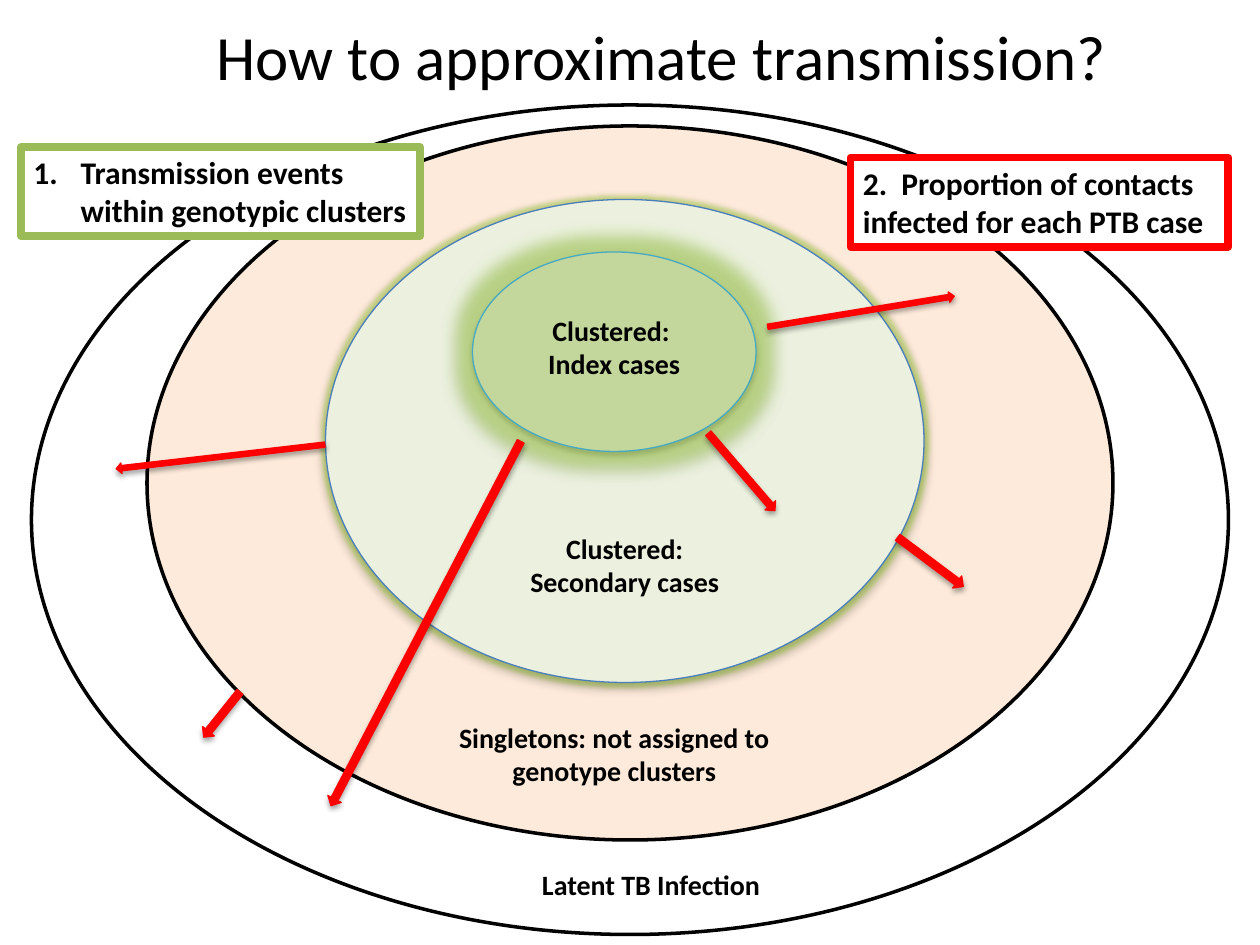
"""Build a slide of nested case groups with arrows for transmission paths."""
from lxml import etree
from pptx import Presentation
from pptx.dml.color import RGBColor
from pptx.enum.shapes import MSO_SHAPE as SHAPE
from pptx.enum.text import MSO_ANCHOR as ANCHOR, PP_ALIGN as ALIGN
from pptx.oxml import parse_xml
from pptx.oxml.ns import nsdecls, qn
from pptx.util import Pt

COLORS = {
    "black": "000000", "white": "FFFFFF", "red": "FF0000", "green": "9BBB59",
    "peach": "FDEADA", "pale": "EBF1DE", "leaf": "C3D69B",
    "blue": "4B7EBC", "teal": "46AAC5", "glow": "9BD22D",
}

prs = Presentation()
prs.slide_width, prs.slide_height = Pt(720), Pt(540)
s = prs.slides.add_slide(prs.slide_layouts[6])


def add_shape(kind, box, fill, line, width, shadow=False, glow=0):
    sp = s.shapes.add_shape(kind, *map(Pt, box))
    if fill:
        sp.fill.solid()
        sp.fill.fore_color.rgb = RGBColor.from_string(COLORS[fill])
    else:
        sp.fill.background()
    sp.line.color.rgb = RGBColor.from_string(COLORS[line])
    sp.line.width = Pt(width)
    sp.shadow.inherit = False
    effects = sp._element.spPr.find(qn("a:effectLst"))
    if glow:
        effects.append(parse_xml(
            f'<a:glow {nsdecls("a")} rad="{Pt(glow)}"><a:srgbClr val="{COLORS["glow"]}">'
            '<a:alpha val="40000"/></a:srgbClr></a:glow>'))
    if shadow:
        effects.append(parse_xml(
            f'<a:outerShdw {nsdecls("a")} blurRad="{Pt(3.1)}" dist="{Pt(1.8)}" dir="5400000" '
            f'rotWithShape="0"><a:srgbClr val="{COLORS["black"]}"><a:alpha val="35000"/>'
            '</a:srgbClr></a:outerShdw>'))
    return sp


def set_text(sp, text, size, align=ALIGN.CENTER, bold=True, anchor=ANCHOR.TOP):
    tf = sp.text_frame
    tf.word_wrap = True
    tf.vertical_anchor = anchor
    tf.text = text
    for p in tf.paragraphs:
        p.alignment = align
        for r in p.runs:
            r.font.name, r.font.size, r.font.bold = "Calibri", Pt(size), bold
            r.font.color.rgb = RGBColor.from_string(COLORS["black"])


title = s.shapes.add_textbox(Pt(54), Pt(0), Pt(648), Pt(63))
set_text(title, "How to approximate transmission?", 36, bold=False, anchor=ANCHOR.MIDDLE)

ellipses = [
    ((18, 60, 684, 474), None, "black", 2, False, 0),
    ((84, 72, 552, 408), "peach", "black", 2, False, 0),
    ((186, 114, 342, 276), "pale", "blue", 0.75, True, 5),
    ((270, 144, 162, 114), "leaf", "teal", 0.75, True, 18),
]
for ellipse in ellipses:
    add_shape(SHAPE.OVAL, *ellipse)

labels = [
    ((252, 408, 198, 46), "Singletons: not assigned to genotype clusters"),
    ((288, 300, 138, 46), "Clustered: Secondary cases"),
    ((282, 175.5, 138, 46), "Clustered: \nIndex cases"),
    ((288, 492, 168, 26.5), "Latent TB Infection"),
]
for box, text in labels:
    set_text(s.shapes.add_textbox(*map(Pt, box)), text, 16)

callouts = [
    ((12, 84, 228, 51), "green", "Transmission events within genotypic clusters"),
    ((486, 90, 216, 51), "red", "2.  Proportion of contacts infected for each PTB case"),
]
for box, line, text in callouts:
    sp = add_shape(SHAPE.RECTANGLE, box, "white", line, 4.5)
    set_text(sp, text, 18, ALIGN.LEFT)
    if line == "green":
        pPr = sp.text_frame.paragraphs[0]._p.get_or_add_pPr()
        pPr.set("marL", str(Pt(27)))
        pPr.set("indent", str(Pt(-27)))
        etree.SubElement(pPr, qn("a:buFont"), typeface="+mj-lt")
        etree.SubElement(pPr, qn("a:buAutoNum"), type="arabicPeriod")

arrows = [
    ((438, 175, 108, 6), 350.7),
    ((66, 258, 120, 6), 173.4),
    ((508.3, 316.8, 46.8, 8.6), 36.8),
    ((394.6, 265.7, 58.3, 8), 49.3),
    ((126, 352, 234.7, 8.6), 117.5),
    ((110.2, 404, 33.1, 8.6), 128.7),
]
for box, angle in arrows:
    add_shape(SHAPE.RIGHT_ARROW, box, "red", "red", 0.75, shadow=True).rotation = angle

prs.save("out.pptx")
